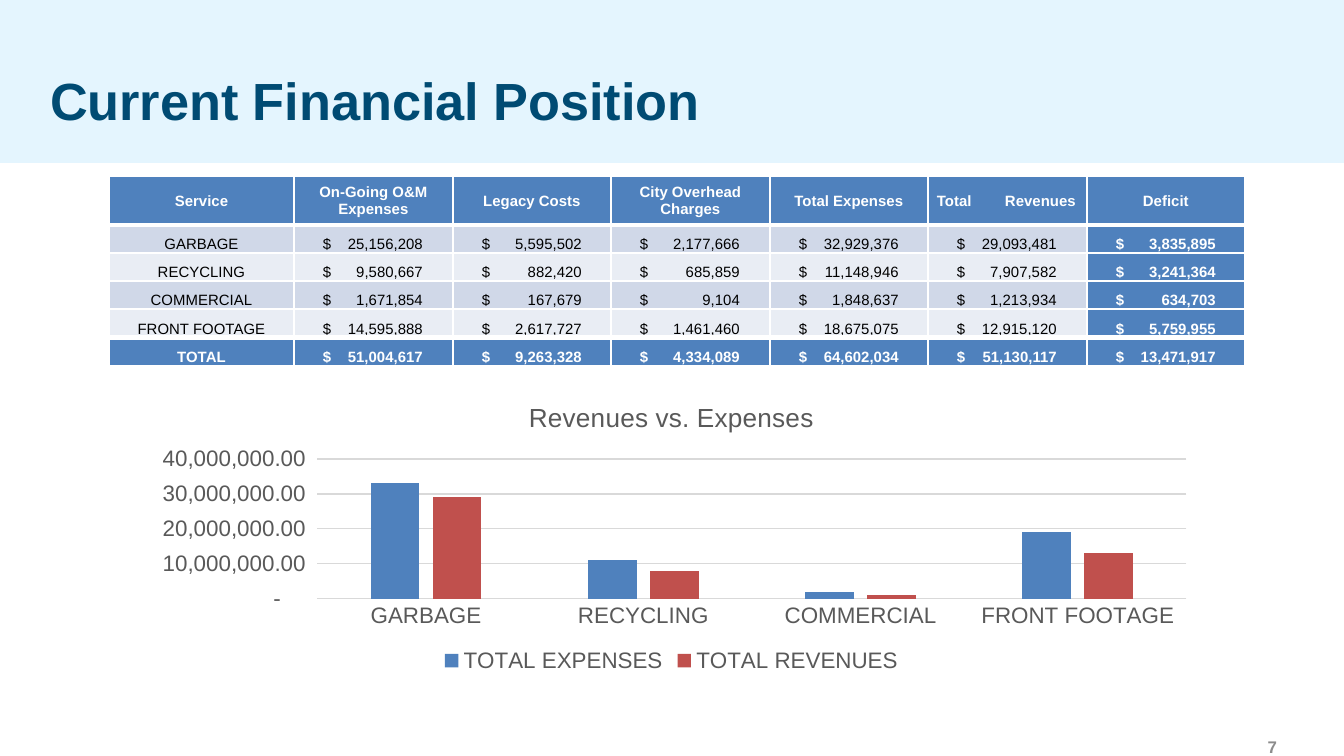
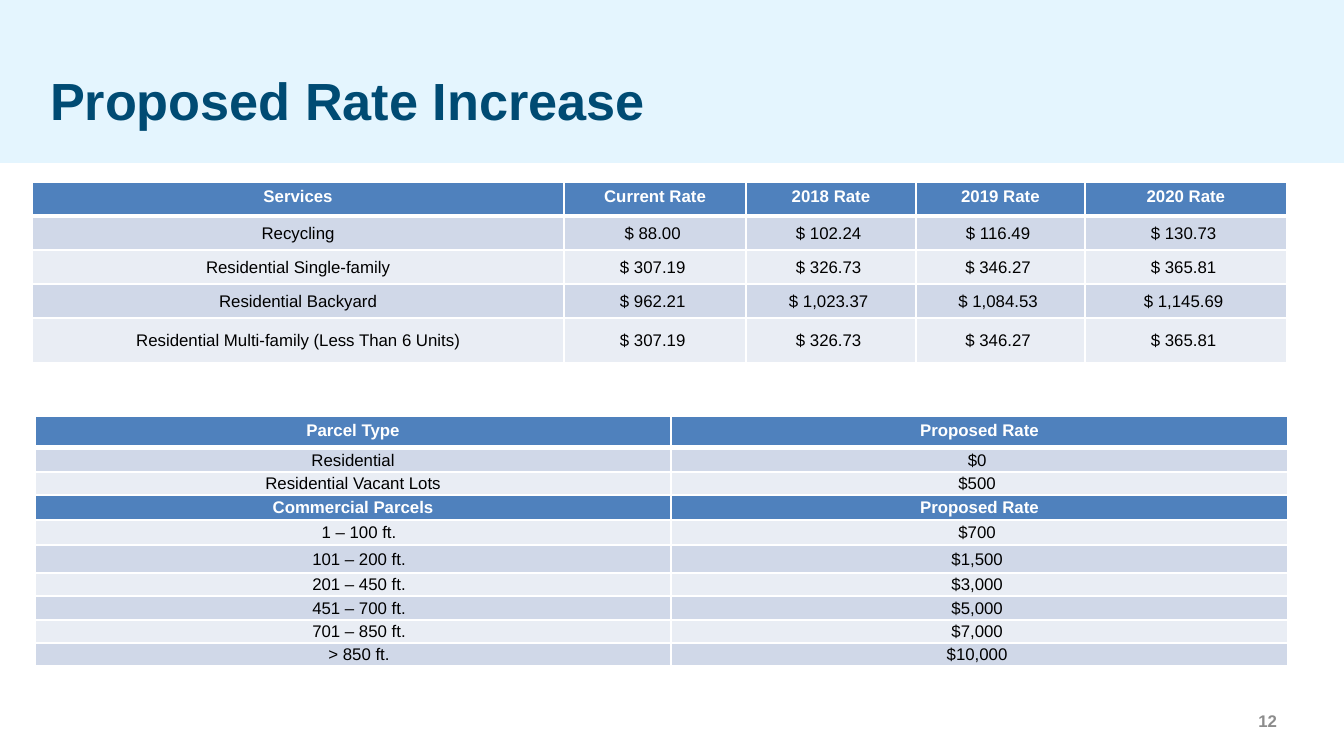
from dataclasses import dataclass

from pptx import Presentation
from pptx.chart.chart import Chart
from pptx.chart.data import CategoryChartData
from pptx.dml.color import RGBColor
from pptx.enum.chart import XL_CHART_TYPE as ChartType, XL_LEGEND_POSITION as LegendPosition
from pptx.enum.chart import XL_TICK_MARK as TickMark
from pptx.enum.shapes import MSO_SHAPE as Preset
from pptx.enum.text import MSO_ANCHOR as Anchor, MSO_AUTO_SIZE as AutoSize, PP_ALIGN as Align
from pptx.oxml.ns import qn
from pptx.slide import Slide, SlideLayout
from pptx.text.text import Font
from pptx.util import Emu, Pt
from lxml.etree import SubElement

FONT = "Arial"
COLORS = {
    "band": "E4F5FE",
    "title": "004B73",
    "number": "8C8C8C",
    "accent": "4F81BD",
    "contrast": "C0504D",
    "odd row": "D0D8E8",
    "even row": "E9EDF4",
    "white": "FFFFFF",
    "black": "000000",
    "label": "595959",
    "grid": "D9D9D9",
}
EMU_PER_PX = 914400 / 134.4
PAGE_WIDTH, PAGE_HEIGHT = 1344, 756
TITLE_ONLY = 5


def px(length: int) -> Emu:
    return Emu(round(length * EMU_PER_PX))


def color(name: str) -> RGBColor:
    return RGBColor.from_string(COLORS[name])


def style_font(font: Font, size: float, color_name: str, bold: bool = False) -> None:
    font.name = FONT
    font.size = Pt(size)
    font.bold = bold
    font.color.rgb = color(color_name)


@dataclass(frozen=True)
class Box:
    left: int
    top: int
    width: int
    height: int

    def emu(self) -> tuple[Emu, Emu, Emu, Emu]:
        return px(self.left), px(self.top), px(self.width), px(self.height)


@dataclass(frozen=True)
class Inset:
    left: int = 1
    top: int = 1
    right: int = 1
    bottom: int = 0


TIGHT = Inset()
ROOMY = Inset(13, 5, 13, 5)
INDENTED = Inset(left=13)


@dataclass(frozen=True)
class TabbedText:
    """Two words pushed apart by a right tab."""
    inset: Inset
    stop: int


MONEY = TabbedText(Inset(left=29), 100)
SPREAD_HEADING = TabbedText(Inset(left=9), 139)


@dataclass(frozen=True)
class TableSpec:
    left: int
    top: int
    widths: list[int]
    heights: list[int]
    rows: list[list[str]]
    size: int
    head_anchor: Anchor
    body_anchor: Anchor
    head_inset: Inset
    accent_rows: tuple[int, ...] = (0,)
    accent_columns: tuple[int, ...] = ()
    thick_edges: tuple[int, ...] = (1,)
    indented_from: int = 99


# Shared page parts

def add_band(page: Slide, layout: SlideLayout) -> None:
    """Draw the header band and hand it to the layout, behind its placeholders."""
    band = page.shapes.add_shape(Preset.RECTANGLE, *Box(0, 0, PAGE_WIDTH, 163).emu())
    band.shadow.inherit = False
    band.fill.solid()
    band.fill.fore_color.rgb = color("band")
    band.line.fill.background()
    layout.shapes.element.insert(2, band.element)


def clear_margins(frame) -> None:
    frame.margin_left = frame.margin_top = frame.margin_right = frame.margin_bottom = 0
    frame.vertical_anchor = Anchor.MIDDLE
    frame.word_wrap = True


def set_title(page: Slide, text: str) -> None:
    title = page.shapes.title
    title.left, title.top, title.width, title.height = Box(0, 70, PAGE_WIDTH, 60).emu()
    frame = title.text_frame
    frame.text = text
    clear_margins(frame)
    frame.auto_size = AutoSize.NONE
    para = frame.paragraphs[0]
    para.alignment = Align.LEFT
    properties = para._p.get_or_add_pPr()
    properties.set("marL", str(px(50)))
    properties.set("indent", "0")
    style_font(para.font, 28, "title", bold=True)


def add_page_number(page: Slide, number: int, top: int) -> None:
    box = page.shapes.add_textbox(*Box(968, top, 309, 20).emu())
    frame = box.text_frame
    clear_margins(frame)
    para = frame.paragraphs[0]
    para.text = str(number)
    para.alignment = Align.RIGHT
    style_font(para.font, 9, "number", bold=True)


# Tables

def set_borders(cell, top_width: int, bottom_width: int) -> None:
    properties = cell._tc.get_or_add_tcPr()
    for side, width in (("L", 1), ("R", 1), ("T", top_width), ("B", bottom_width)):
        line = SubElement(properties, qn(f"a:ln{side}"), w=str(Pt(width)))
        fill = SubElement(line, qn("a:solidFill"))
        SubElement(fill, qn("a:srgbClr"), val=COLORS["white"])


def write_cell(cell, text: str, inset: Inset, size: int, accented: bool) -> None:
    tabbed = None
    if "\t" in text:
        tabbed = MONEY if text.startswith("$") else SPREAD_HEADING
        inset = tabbed.inset
    cell.margin_left, cell.margin_top = px(inset.left), px(inset.top)
    cell.margin_right, cell.margin_bottom = px(inset.right), px(inset.bottom)
    para = cell.text_frame.paragraphs[0]
    para.text = text
    para.alignment = Align.LEFT if tabbed else Align.CENTER
    if tabbed:
        stops = SubElement(para._p.get_or_add_pPr(), qn("a:tabLst"))
        SubElement(stops, qn("a:tab"), pos=str(px(tabbed.stop)), algn="r")
    style_font(para.font, size, "white" if accented else "black", bold=accented)


def add_grid(page: Slide, spec: TableSpec) -> None:
    box = Box(spec.left, spec.top, sum(spec.widths), sum(spec.heights))
    table = page.shapes.add_table(len(spec.heights), len(spec.widths), *box.emu()).table
    table.first_row = table.horz_banding = False
    for column, width in zip(table.columns, spec.widths):
        column.width = px(width)
    for row, height in zip(table.rows, spec.heights):
        row.height = px(height)

    def edge_width(edge: int) -> int:
        return 3 if edge in spec.thick_edges else 1

    for r, texts in enumerate(spec.rows):
        for c, text in enumerate(texts):
            cell = table.cell(r, c)
            accented = r in spec.accent_rows or c in spec.accent_columns
            inset = spec.head_inset if r == 0 else TIGHT
            if c == 0 and r >= spec.indented_from:
                inset = INDENTED
            set_borders(cell, edge_width(r), edge_width(r + 1))
            cell.fill.solid()
            cell.fill.fore_color.rgb = color(
                "accent" if accented else "odd row" if r % 2 else "even row")
            cell.vertical_anchor = spec.body_anchor if r else spec.head_anchor
            write_cell(cell, text, inset, spec.size, accented)


# Chart

def style_chart(chart: Chart) -> None:
    style_font(chart.font, 12, "label")
    chart.has_title = True
    title = chart.chart_title
    title.include_in_layout = False
    title.text_frame.text = "Revenues vs. Expenses"
    style_font(title.text_frame.paragraphs[0].font, 14, "label")
    chart.has_legend = True
    chart.legend.position = LegendPosition.BOTTOM
    chart.legend.include_in_layout = False
    style_font(chart.legend.font, 12, "label")

    for axis in (chart.category_axis, chart.value_axis):
        axis.major_tick_mark = axis.minor_tick_mark = TickMark.NONE
        style_font(axis.tick_labels.font, 12, "label")
    values = chart.value_axis
    values.minimum_scale, values.maximum_scale, values.major_unit = 0, 40_000_000, 10_000_000
    values.tick_labels.number_format = '_(* #,##0.00_);_(* \\(#,##0.00\\);_(* "-"??_);_(@_)'
    values.tick_labels.number_format_is_linked = False
    values.format.line.fill.background()
    for line in (chart.category_axis.format.line, values.major_gridlines.format.line):
        line.color.rgb = color("grid")
        line.width = Pt(0.75)

    plot = chart.plots[0]
    plot.vary_by_categories = False
    plot.gap_width, plot.overlap = 219, -27
    for series, fill_name in zip(plot.series, ("accent", "contrast")):
        series.format.fill.solid()
        series.format.fill.fore_color.rgb = color(fill_name)


def add_revenue_chart(page: Slide) -> None:
    """Compare the two totals of each service, in whole millions."""
    data = CategoryChartData()
    data.categories = list(FINANCES)
    for name, column in (("TOTAL EXPENSES", 3), ("TOTAL REVENUES", 4)):
        data.add_series(name, [round(amounts[column], -6) for amounts in FINANCES.values()])
    frame = page.shapes.add_chart(
        ChartType.COLUMN_CLUSTERED, *Box(135, 383, 1073, 295).emu(), data)
    style_chart(frame.chart)


# Content

FINANCE_HEADINGS = ["Service", "On-Going O&M Expenses", "Legacy Costs", "City Overhead Charges",
                    "Total Expenses", "Total\tRevenues", "Deficit"]
FINANCES = {
    "GARBAGE": [25156208, 5595502, 2177666, 32929376, 29093481, 3835895],
    "RECYCLING": [9580667, 882420, 685859, 11148946, 7907582, 3241364],
    "COMMERCIAL": [1671854, 167679, 9104, 1848637, 1213934, 634703],
    "FRONT FOOTAGE": [14595888, 2617727, 1461460, 18675075, 12915120, 5759955],
}
TOTALS = {"TOTAL": [sum(column) for column in zip(*FINANCES.values())]}

FINANCE_TABLE = TableSpec(
    109, 176, [185] + [159, 158] * 3, [49, 28, 28, 28, 29, 28],
    [FINANCE_HEADINGS] + [[name] + [f"$\t{amount:,}" for amount in amounts]
                          for name, amounts in (FINANCES | TOTALS).items()],
    8, Anchor.MIDDLE, Anchor.BOTTOM, TIGHT,
    accent_rows=(0, 5), accent_columns=(6,), thick_edges=(1, 5))

SERVICE_RATES = TableSpec(
    32, 182, [532, 182, 170, 169, 202], [34] * 4 + [45],
    [["Services", "Current Rate", "2018 Rate", "2019 Rate", "2020 Rate"],
     ["Recycling", "$ 88.00 ", "$ 102.24 ", "$ 116.49 ", "$ 130.73 "],
     ["Residential Single-family", "$ 307.19 ", "$ 326.73 ", "$ 346.27 ", "$ 365.81 "],
     ["Residential Backyard", "$ 962.21 ", "$ 1,023.37 ", "$ 1,084.53 ", "$ 1,145.69 "],
     ["Residential Multi-family (Less Than 6 Units)",
      "$ 307.19 ", "$ 326.73 ", "$ 346.27 ", "$ 365.81 "]],
    9, Anchor.TOP, Anchor.MIDDLE, ROOMY)

PARCEL_RATES = TableSpec(
    35, 416, [636, 617], [32, 24, 23, 25, 25, 28, 23, 24, 23, 23],
    [["Parcel Type", "Proposed Rate"],
     ["Residential", "$0 "],
     ["Residential Vacant Lots", "$500 "],
     ["Commercial Parcels", "Proposed Rate"],
     ["1 – 100 ft.", "$700 "],
     ["101 – 200 ft.", "$1,500 "],
     ["201 – 450 ft.", "$3,000 "],
     ["451 – 700 ft.", "$5,000 "],
     ["701 – 850 ft.", "$7,000 "],
     ["> 850 ft.", "$10,000 "]],
    9, Anchor.TOP, Anchor.MIDDLE, ROOMY, accent_rows=(0, 3), indented_from=4)


def main() -> None:
    deck = Presentation()
    deck.slide_width, deck.slide_height = px(PAGE_WIDTH), px(PAGE_HEIGHT)
    layout = deck.slide_layouts[TITLE_ONLY]

    # Current finances
    finance_page = deck.slides.add_slide(layout)
    add_band(finance_page, layout)
    set_title(finance_page, "Current Financial Position")
    add_page_number(finance_page, 7, 737)
    add_revenue_chart(finance_page)
    add_grid(finance_page, FINANCE_TABLE)

    # Proposed rates
    rate_page = deck.slides.add_slide(layout)
    set_title(rate_page, "Proposed Rate Increase")
    add_page_number(rate_page, 12, 711)
    add_grid(rate_page, SERVICE_RATES)
    add_grid(rate_page, PARCEL_RATES)

    deck.save("out.pptx")


if __name__ == "__main__":
    main()
